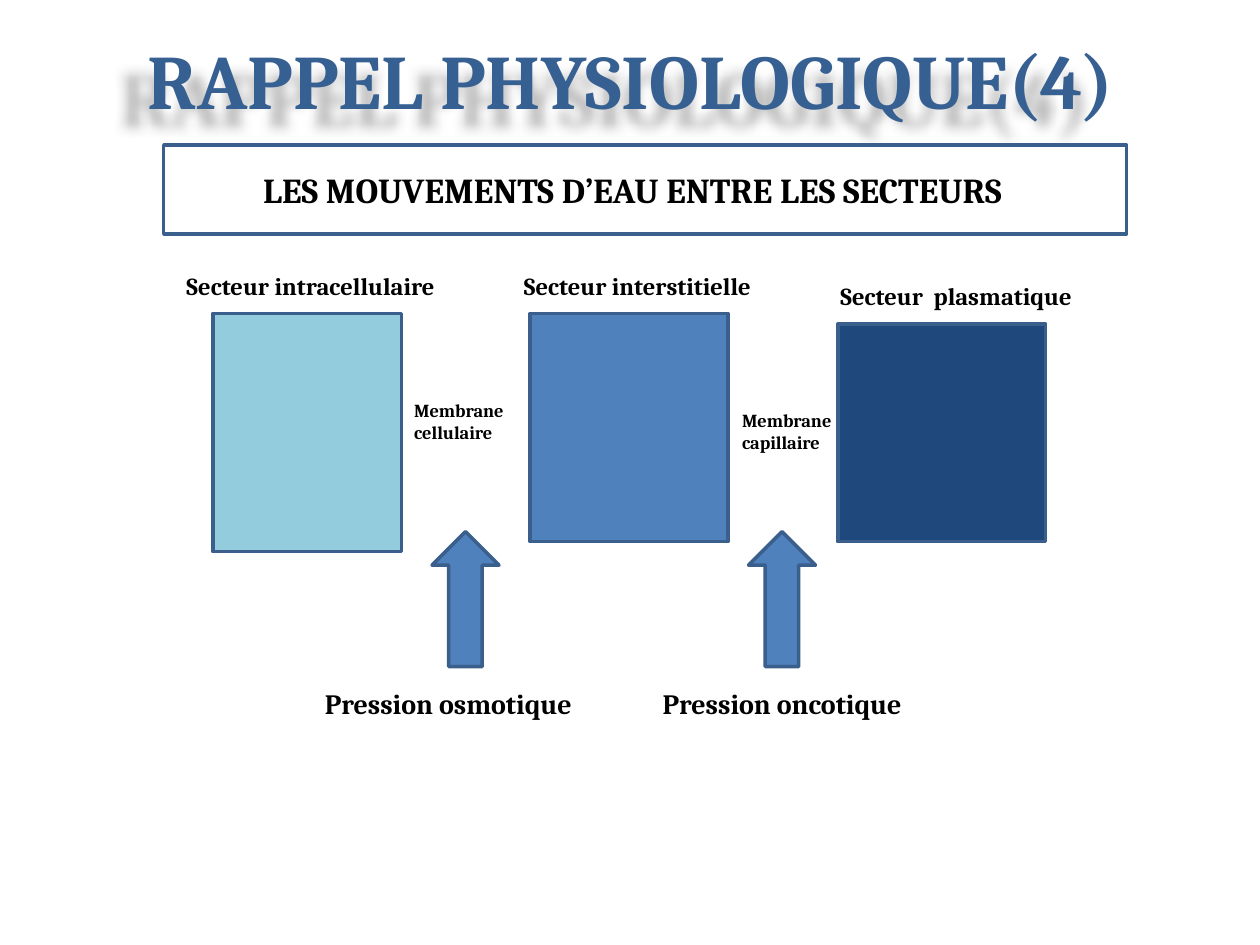
from lxml.etree import SubElement
from pptx import Presentation
from pptx.dml.color import RGBColor
from pptx.enum.shapes import MSO_SHAPE
from pptx.enum.text import MSO_ANCHOR, MSO_AUTO_SIZE, PP_ALIGN
from pptx.oxml.ns import qn
from pptx.util import Cm, Pt

OUTLINE = "3A5F8C"
BLUE = "4F81BD"
BLACK = "000000"


def color(hex_value):
    return RGBColor.from_string(hex_value)


def write(frame, text, size, hex_value=BLACK, align=PP_ALIGN.LEFT):
    """Put one bold paragraph into a text frame."""
    paragraph = frame.paragraphs[0]
    paragraph.alignment = align
    run = paragraph.add_run()
    run.text = text
    for name, value in {"name": "Cambria", "size": Pt(size), "bold": True}.items():
        setattr(run.font, name, value)
    run.font.color.rgb = color(hex_value)


def add_title(slide, text):
    title = slide.shapes.title
    place = {"left": Cm(1.3), "top": Cm(0), "width": Cm(22.86), "height": Cm(3.18)}
    for name, value in place.items():
        setattr(title, name, value)
    title.text_frame.vertical_anchor = MSO_ANCHOR.MIDDLE
    write(title.text_frame, text, 44, "376092", PP_ALIGN.CENTER)
    # Soft shadow, down and to the left of the letters
    effects = SubElement(title.element.spPr, qn("a:effectLst"))
    shadow = SubElement(effects, qn("a:outerShdw"), blurRad="90000",
                        dist="230000", dir="9000000", rotWithShape="0")
    shade = SubElement(shadow, qn("a:srgbClr"), val=BLACK)
    SubElement(shade, qn("a:alpha"), val="30000")


def add_block(slide, kind, left, top, width, height, fill):
    block = slide.shapes.add_shape(kind, Cm(left), Cm(top), Cm(width), Cm(height))
    block.shadow.inherit = False
    block.fill.solid()
    block.fill.fore_color.rgb = color(fill)
    block.line.color.rgb = color(OUTLINE)
    block.line.width = Pt(2)
    return block


def add_label(slide, text, left, top, width, height, size, wrap=False):
    label = slide.shapes.add_textbox(Cm(left), Cm(top), Cm(width), Cm(height))
    label.text_frame.word_wrap = wrap
    label.text_frame.auto_size = MSO_AUTO_SIZE.SHAPE_TO_FIT_TEXT
    write(label.text_frame, text, size)


def main():
    deck = Presentation()
    deck.slide_width, deck.slide_height = Cm(25.4), Cm(19.05)
    slide = deck.slides.add_slide(deck.slide_layouts[5])

    # Title and boxed subject
    add_title(slide, "RAPPEL PHYSIOLOGIQUE(4)")
    subject = add_block(slide, MSO_SHAPE.RECTANGLE, 3.3, 2.92, 19.41, 1.8, "FFFFFF")
    frame = subject.text_frame
    frame.vertical_anchor = MSO_ANCHOR.MIDDLE
    frame.margin_right = Cm(0.75)
    write(frame, "LES MOUVEMENTS D’EAU ENTRE LES SECTEURS", 20, align=PP_ALIGN.CENTER)

    # Sectors: name, name left and width, box left, top, width, height, fill
    sectors = [
        ("Secteur intracellulaire", 3.51, 5.54, 4.29, 6.32, 3.81, 4.8, "93CDDD"),
        ("Secteur interstitielle", 10.31, 5.11, 10.69, 6.32, 3.99, 4.6, BLUE),
        ("Secteur  plasmatique", 16.69, 5.26, 16.89, 6.53, 4.19, 4.39, "1F497D"),
    ]
    for name, name_left, name_width, left, top, width, height, fill in sectors:
        add_block(slide, MSO_SHAPE.RECTANGLE, left, top, width, height, fill)
        add_label(slide, name, name_left, top - 0.99, name_width, 0.86, 14)

    # Membranes, each with the pressure acting on it:
    # membrane, left, top, width, arrow left, pressure, left, width
    exchanges = [
        ("Membrane cellulaire", 8.1, 7.92, 2.59, 8.71, "Pression osmotique", 6.3, 5.64),
        ("Membrane capillaire", 14.71, 8.13, 2.39, 15.09, "Pression oncotique", 13.11, 5.46),
    ]
    for membrane, left, top, width, arrow_left, pressure, pressure_left, pressure_width in exchanges:
        add_label(slide, membrane, left, top, width, 1.19, 10.5, wrap=True)
        add_block(slide, MSO_SHAPE.UP_ARROW, arrow_left, 10.72, 1.35, 2.72, BLUE)
        add_label(slide, pressure, pressure_left, 13.72, pressure_width, 0.94, 16)

    deck.save("out.pptx")


if __name__ == "__main__":
    main()
